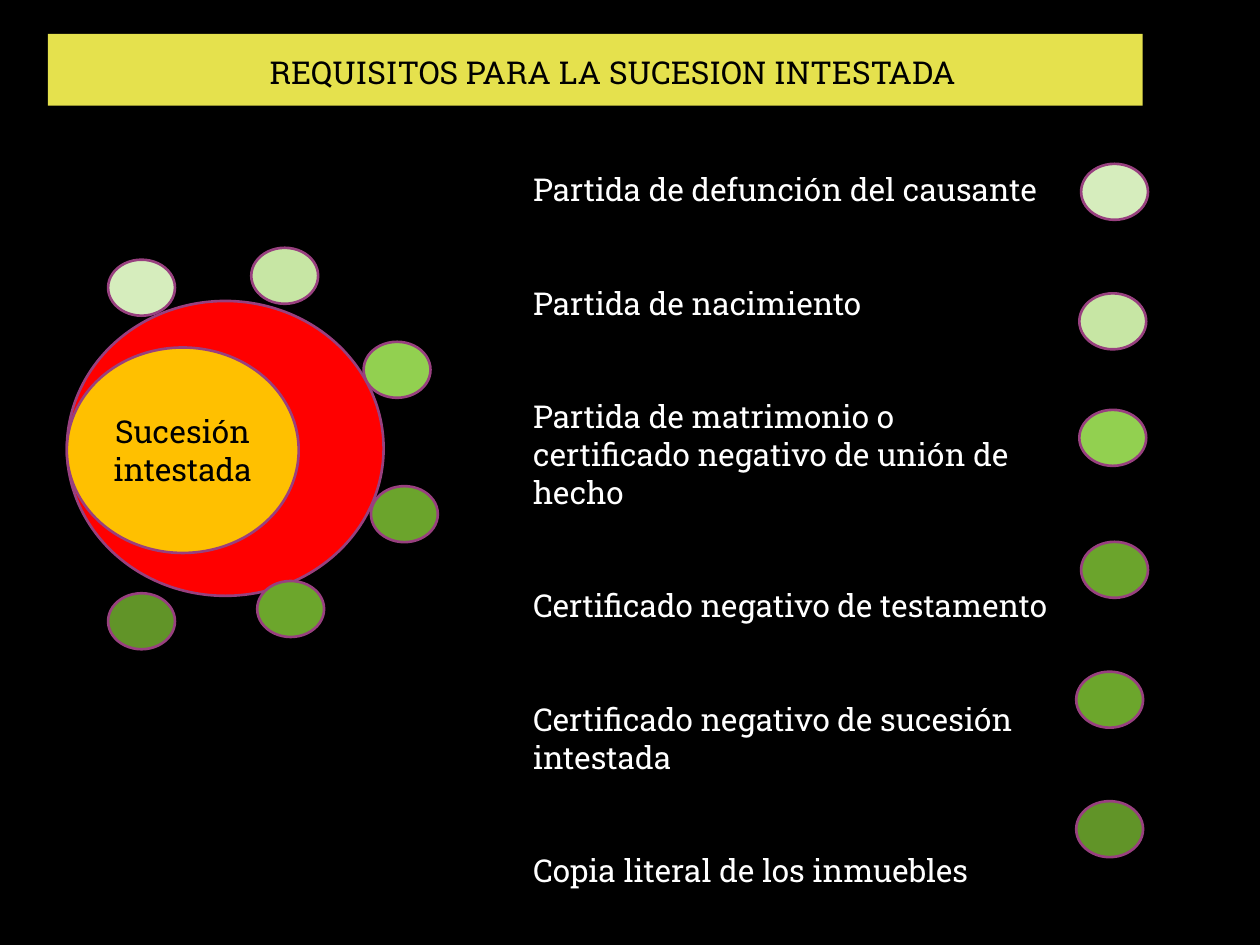
"""Build the slide on the requirements for an intestate succession."""
from pptx import Presentation
from pptx.dml.color import RGBColor as RGB
from pptx.enum.shapes import MSO_SHAPE as SHAPE
from pptx.enum.text import MSO_ANCHOR as ANCHOR, MSO_AUTO_SIZE as AUTO, PP_ALIGN as ALIGN
from pptx.util import Pt

BLACK = RGB(0x00, 0x00, 0x00)
WHITE = RGB(0xFF, 0xFF, 0xFF)
YELLOW = RGB(0xE5, 0xE1, 0x4D)
RED = RGB(0xFF, 0x00, 0x00)
AMBER = RGB(0xFF, 0xC0, 0x00)
PURPLE = RGB(0x98, 0x40, 0x7F)
GREENS = [
    RGB(0xD6, 0xED, 0xBD),
    RGB(0xC7, 0xE6, 0xA4),
    RGB(0x92, 0xD0, 0x50),
    RGB(0x6B, 0xA4, 0x2C),
    RGB(0x6C, 0xA6, 0x2C),
    RGB(0x61, 0x94, 0x28),
]
FONT = {"name": "Roboto Slab", "size": Pt(18)}
DOT_SIZE = (38.2, 32)
RING_DOTS = [(61.8, 148.4), (143.6, 141.6), (207.8, 195.3),
             (212, 277.8), (147, 332), (61.8, 339)]
LIST_DOTS = [(617.8, 93.6), (616.8, 167.6), (616.8, 234.2),
             (617.8, 309.6), (615, 383.8), (615, 457.8)]
REQUIREMENTS = [
    "Partida de defunción del causante",
    "Partida de nacimiento",
    "Partida de matrimonio o certificado negativo de unión de hecho",
    "Certificado negativo de testamento",
    "Certificado negativo de sucesión intestada",
    "Copia literal de los inmuebles",
]


def add_figure(kind, box, color, outline=PURPLE):
    sp = s.shapes.add_shape(kind, *map(Pt, box))
    sp.shadow.inherit = False
    sp.fill.solid()
    sp.fill.fore_color.rgb = color
    if outline is None:
        sp.line.fill.background()
    else:
        sp.line.color.rgb = outline
        sp.line.width = Pt(1.5)
    return sp


def set_text(sp, lines, color, align, anchor, gap=0):
    tf = sp.text_frame
    tf.text = "\n".join(lines)
    frame = {"word_wrap": True, "auto_size": AUTO.NONE, "vertical_anchor": anchor}
    for name, value in frame.items():
        setattr(tf, name, value)
    layout = {"alignment": align, "space_before": Pt(0), "space_after": Pt(gap)}
    for p in tf.paragraphs:
        for name, value in layout.items():
            setattr(p, name, value)
        for r in p.runs:
            for name, value in FONT.items():
                setattr(r.font, name, value)
            r.font.color.rgb = color


prs = Presentation()
prs.slide_width, prs.slide_height = Pt(720), Pt(540)
s = prs.slides.add_slide(prs.slide_layouts[1])
s.background.fill.solid()
s.background.fill.fore_color.rgb = BLACK
title, body = s.placeholders

add_figure(SHAPE.RECTANGLE, (27.4, 19.4, 625.6, 41), YELLOW, None)
add_figure(SHAPE.OVAL, (38.2, 172, 181, 168.5), RED)
core = add_figure(SHAPE.OVAL, (38.2, 198.6, 132.5, 117.4), AMBER)
set_text(core, ["Sucesión intestada"], BLACK, ALIGN.CENTER, ANCHOR.MIDDLE)

for dots in (RING_DOTS, LIST_DOTS):
    for spot, green in zip(dots, GREENS):
        add_figure(SHAPE.OVAL, (*spot, *DOT_SIZE), green)

places = [(title, (146.9, 26.6, 429.8, 28.8)), (body, (297.4, 93.6, 311.8, 399.6))]
for sp, box in places:
    for name, value in zip(("left", "top", "width", "height"), box):
        setattr(sp, name, Pt(value))

set_text(title, ["REQUISITOS PARA LA SUCESION INTESTADA"], BLACK, ALIGN.LEFT, ANCHOR.MIDDLE)
s.shapes._spTree.append(title._element)

set_text(body, REQUIREMENTS, WHITE, ALIGN.LEFT, ANCHOR.TOP, gap=43.3)
for p in body.text_frame.paragraphs:
    pPr = p._p.get_or_add_pPr()
    pPr.set("marL", "0")
    pPr.set("indent", "0")
    pPr.insert_element_before(pPr.makeelement(
        "{http://schemas.openxmlformats.org/drawingml/2006/main}buNone", {}),
        "a:tabLst", "a:defRPr", "a:extLst")

prs.save("out.pptx")
